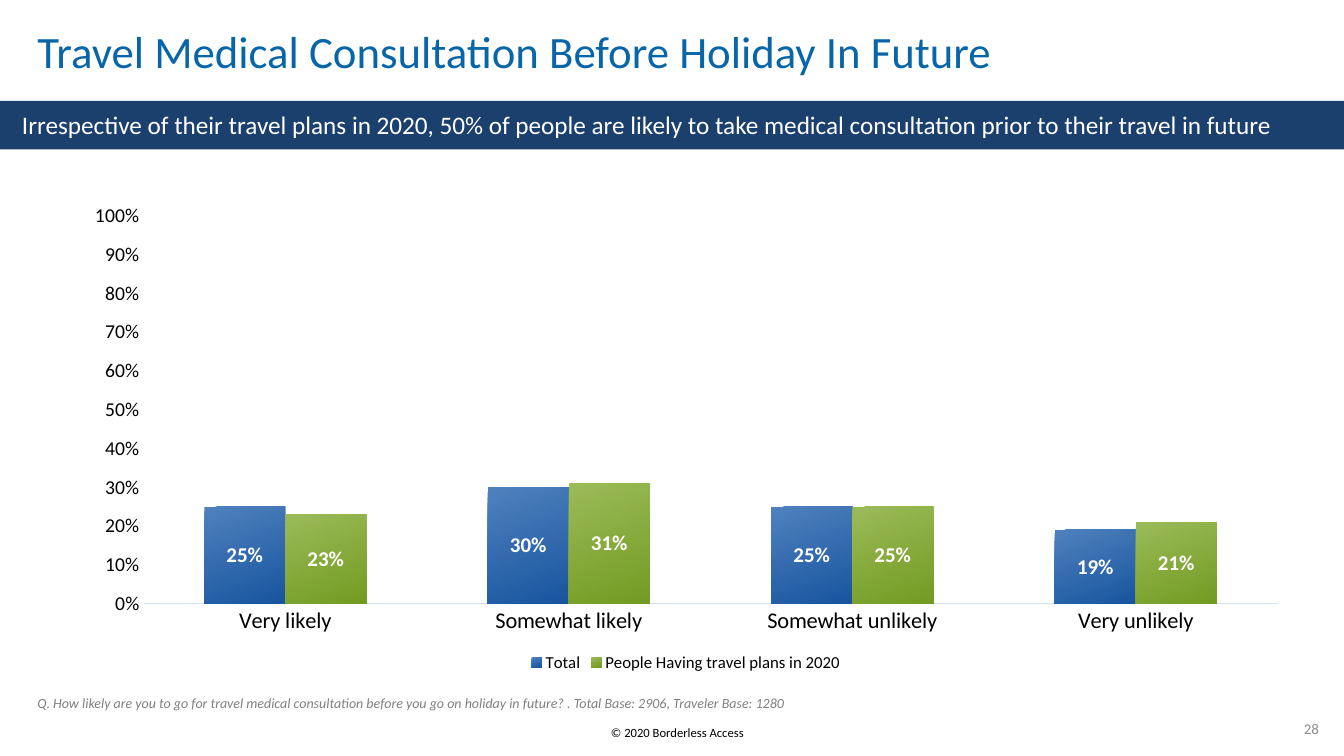
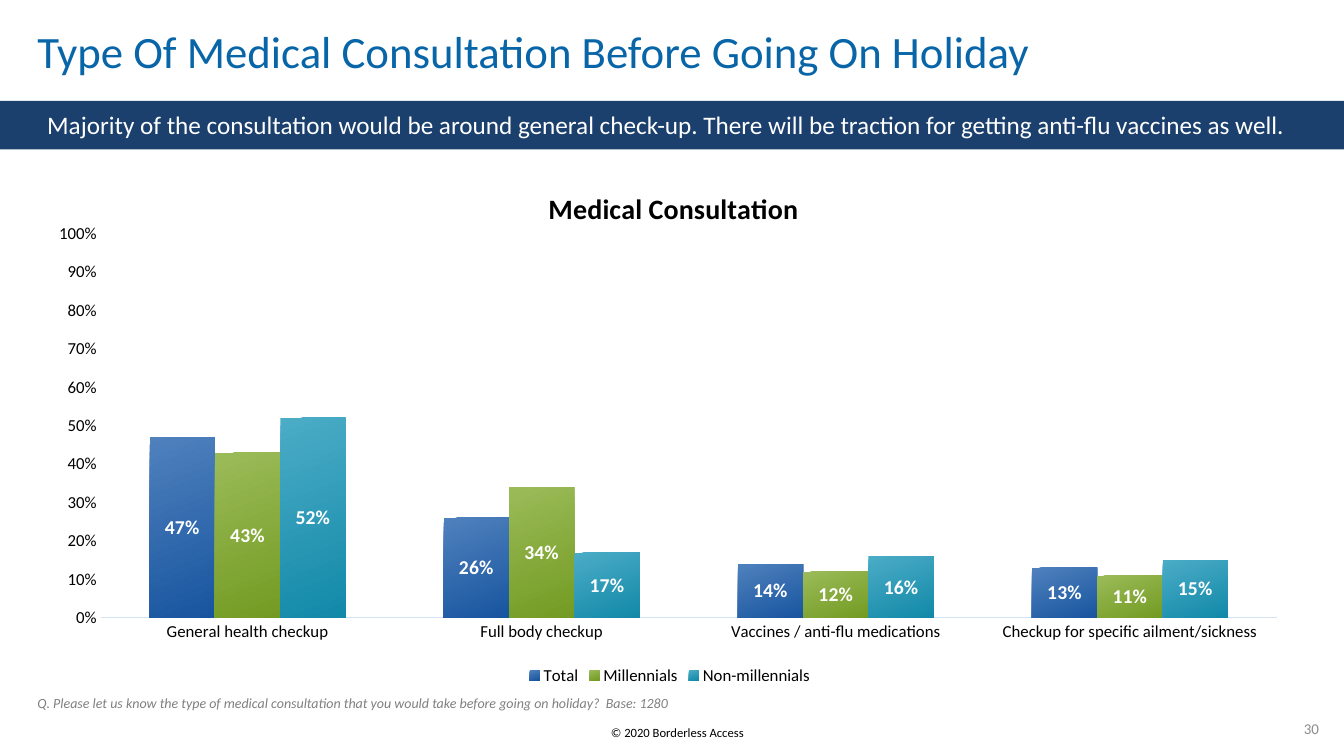
from lxml import etree
from pptx import Presentation
from pptx.chart.data import CategoryChartData
from pptx.dml.color import RGBColor
from pptx.enum.chart import XL_CHART_TYPE, XL_LABEL_POSITION, XL_LEGEND_POSITION, XL_TICK_MARK
from pptx.enum.shapes import MSO_SHAPE
from pptx.enum.text import MSO_ANCHOR, PP_ALIGN
from pptx.oxml.ns import qn
from pptx.util import Pt

CLUSTERED = XL_CHART_TYPE.COLUMN_CLUSTERED
LABEL_CENTER = XL_LABEL_POSITION.CENTER
LEGEND_BOTTOM = XL_LEGEND_POSITION.BOTTOM
NO_TICK = XL_TICK_MARK.NONE
RECTANGLE = MSO_SHAPE.RECTANGLE
TOP, MIDDLE, BOTTOM = MSO_ANCHOR.TOP, MSO_ANCHOR.MIDDLE, MSO_ANCHOR.BOTTOM
LEFT, CENTER = PP_ALIGN.LEFT, PP_ALIGN.CENTER

FONT = "Calibri"
COLORS = {
    "title": "0866A8", "band": "1B406D", "white": "FFFFFF", "black": "000000",
    "question": "808080", "number": "8C8C8C", "axis": "D4E3F4",
}
SERIES_GRADIENTS = [("4F81BD", "18559F"), ("9BBB59", "739B22"), ("4BACC6", "1289A9")]
GRADIENT_ANGLE = 291
PAGE_WIDTH, PAGE_HEIGHT = 960, 540
BAND_BOX = (0, 72, PAGE_WIDTH, 34.8)

SLIDES = [
    {
        "title": "Travel Medical Consultation Before Holiday In Future",
        "message": "Irrespective of their travel plans in 2020, 50% of people are likely "
                   "to take medical consultation prior to their travel in future",
        "message_box": (8.64, 2.8, 922, 29), "message_wrap": False,
        "question": "Q. How likely are you to go for travel medical consultation before you go "
                    "on holiday in future? . Total Base: 2906, Traveler Base: 1280",
        "number": "28",
        "chart": {
            "box": (49.7, 136.8, 880.5, 346.3), "plot": (0.06, 0.05, 0.92, 0.8),
            "title": None, "sizes": {"category": 16, "value": 14, "label": 15},
            "categories": ["Very likely", "Somewhat likely", "Somewhat unlikely", "Very unlikely"],
            "series": {
                "Total": (0.25, 0.3, 0.25, 0.19),
                "People Having travel plans in 2020": (0.23, 0.31, 0.25, 0.21),
            },
        },
    },
    {
        "title": "Type Of Medical Consultation Before Going On Holiday",
        "message": "Majority of the consultation would be around general check-up. "
                   "There will be traction for getting anti-flu vaccines as well.",
        "message_box": (26.64, 2.2, 907, 29), "message_wrap": True,
        "question": "Q. Please let us know the type of medical consultation that you would take "
                    "before going on holiday?  Base: 1280",
        "number": "30",
        "chart": {
            "box": (26.64, 100.1, 903.6, 392.4), "plot": (0.05, 0.17, 0.93, 0.7),
            "title": "Medical Consultation", "sizes": {"category": 12, "value": 12, "label": 14},
            "categories": ["General health checkup", "Full body checkup",
                           "Vaccines / anti-flu medications",
                           "Checkup for specific ailment/sickness"],
            "series": {
                "Total": (0.47, 0.26, 0.14, 0.13),
                "Millennials": (0.43, 0.34, 0.12, 0.11),
                "Non-millennials": (0.52, 0.17, 0.16, 0.15),
            },
        },
    },
]


def rgb(name):
    return RGBColor.from_string(COLORS[name])


def style_font(font, size, color, bold=False, italic=False):
    font.name, font.size, font.bold, font.italic = FONT, Pt(size), bold, italic
    font.color.rgb = rgb(color)


def add_text(page, box, text, size, color, align=LEFT, anchor=MIDDLE,
             inset=(0, 0), wrap=True, italic=False):
    """Add one paragraph; inset is the horizontal and vertical margin."""
    frame = page.shapes.add_textbox(*map(Pt, box)).text_frame
    frame.word_wrap, frame.vertical_anchor = wrap, anchor
    frame.margin_left = frame.margin_right = Pt(inset[0])
    frame.margin_top = frame.margin_bottom = Pt(inset[1])
    para = frame.paragraphs[0]
    para.text, para.alignment = text, align
    style_font(para.runs[0].font, size, color, italic=italic)
    return para


def add_header(page, title):
    para = add_text(page, (26.64, 22.3, 812, 33.1), title, 32, "title")
    para.line_spacing = 0.85


def add_message_band(page, band_box, message, message_box, wrap):
    """Draw the band; message_box is relative to its top left corner."""
    band = page.shapes.add_shape(RECTANGLE, *map(Pt, band_box))
    band.shadow.inherit = False
    band.fill.solid()
    band.fill.fore_color.rgb = rgb("band")
    band.line.fill.background()
    left, top, width, height = message_box
    add_text(page, (band_box[0] + left, band_box[1] + top, width, height), message,
             18, "white", anchor=TOP, inset=(7.2, 3.6), wrap=wrap)


def add_footer(page, question, number):
    add_text(page, (26.64, 496.1, 915, 12.2), question, 10, "question",
             anchor=BOTTOM, italic=True)
    add_text(page, (349.2, 514.1, 269.3, 18), "© 2020 Borderless Access", 9, "black",
             align=CENTER, anchor=TOP, inset=(7.2, 3.6))
    add_text(page, (930.2, 514.1, 13, 13), number, 10.7, "number", align=CENTER, wrap=False)


def place_chart_part(part, fractions, inner=False):
    """Fix a chart part at x, y (and w, h) fractions of the chart box."""
    for old in part.findall(qn("c:layout")):
        part.remove(old)
    layout = etree.Element(qn("c:layout"))
    manual = etree.SubElement(layout, qn("c:manualLayout"))
    settings = [("layoutTarget", "inner")] if inner else []
    settings += [("xMode", "edge"), ("yMode", "edge")]
    settings += zip("xywh", map(str, fractions))
    for tag, value in settings:
        etree.SubElement(manual, qn(f"c:{tag}")).set("val", value)
    text = part.find(qn("c:tx"))
    part.insert(0 if text is None else part.index(text) + 1, layout)


def style_axes(chart, sizes):
    category, value = chart.category_axis, chart.value_axis
    for axis, size in ((category, sizes["category"]), (value, sizes["value"])):
        axis.major_tick_mark = axis.minor_tick_mark = NO_TICK
        axis.has_major_gridlines = False
        style_font(axis.tick_labels.font, size, "black")
    category.format.line.color.rgb = rgb("axis")
    category.format.line.width = Pt(0.75)
    value.format.line.fill.background()
    value.minimum_scale, value.maximum_scale, value.major_unit = 0, 1, 0.1
    value.tick_labels.number_format = "0%"
    value.tick_labels.number_format_is_linked = False


def style_series(series, gradient, label_size):
    fill = series.format.fill
    fill.gradient()
    fill.gradient_angle = GRADIENT_ANGLE
    for stop, color in zip(fill.gradient_stops, gradient):
        stop.color.rgb = RGBColor.from_string(color)
    series.invert_if_negative = False
    labels = series.data_labels
    labels.show_value = True
    labels.position = LABEL_CENTER
    labels.number_format = "0%"
    labels.number_format_is_linked = False
    style_font(labels.font, label_size, "white", bold=True)


def add_column_chart(page, box, plot, title, sizes, categories, series):
    data = CategoryChartData(number_format="0%")
    data.categories = categories
    for name, values in series.items():
        data.add_series(name, values)
    chart = page.shapes.add_chart(CLUSTERED, *map(Pt, box), data).chart
    style_font(chart.font, 10, "black")
    chart.has_title = title is not None
    if title:
        frame = chart.chart_title.text_frame
        frame.text = title
        style_font(frame.paragraphs[0].runs[0].font, 20, "black", bold=True)
        chart.chart_title.include_in_layout = False
        place_chart_part(chart.chart_title.format.line and frame._txBody.getparent().getparent()
                         .getparent().find(qn("c:title")), (0.4, 0.08))
    chart.has_legend = True
    chart.legend.position = LEGEND_BOTTOM
    chart.legend.include_in_layout = False
    style_font(chart.legend.font, 12, "black")
    style_axes(chart, sizes)
    columns = chart.plots[0]
    columns.gap_width, columns.overlap, columns.vary_by_categories = 150, 0, False
    for item, gradient in zip(columns.series, SERIES_GRADIENTS):
        style_series(item, gradient, sizes["label"])
    place_chart_part(chart.element.find(".//" + qn("c:plotArea")), plot, inner=True)


def add_chart_slide(deck, content):
    page = deck.slides.add_slide(deck.slide_layouts[6])
    add_header(page, content["title"])
    add_message_band(page, BAND_BOX, content["message"], content["message_box"],
                     content["message_wrap"])
    add_column_chart(page, **content["chart"])
    add_footer(page, content["question"], content["number"])


def main():
    deck = Presentation()
    deck.slide_width, deck.slide_height = Pt(PAGE_WIDTH), Pt(PAGE_HEIGHT)
    for content in SLIDES:
        add_chart_slide(deck, content)
    deck.save("out.pptx")


if __name__ == "__main__":
    main()
